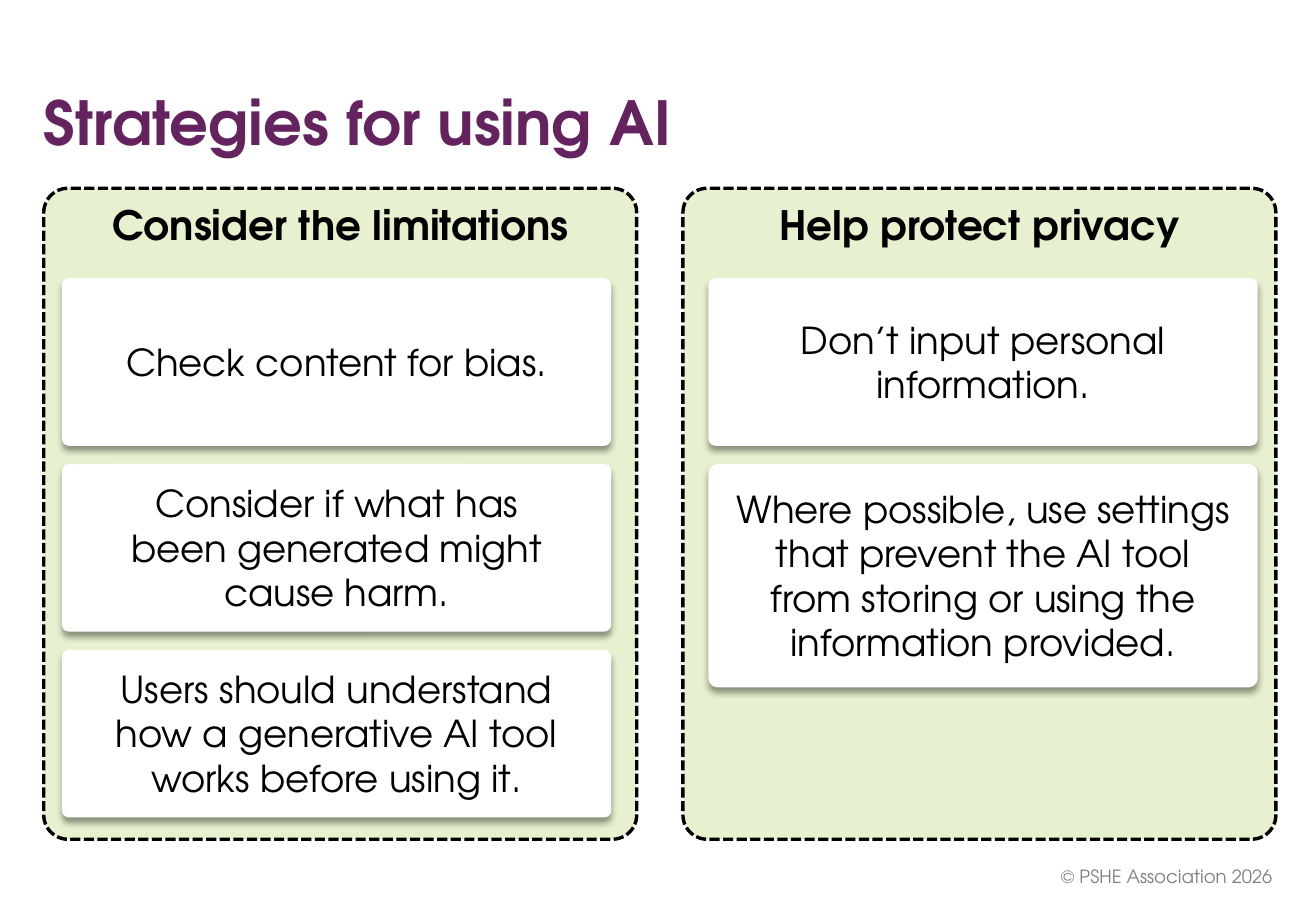
from lxml.etree import SubElement
from pptx import Presentation
from pptx.dml.color import RGBColor
from pptx.enum.dml import MSO_LINE
from pptx.enum.shapes import MSO_SHAPE
from pptx.enum.text import MSO_ANCHOR, PP_ALIGN
from pptx.oxml.ns import qn
from pptx.util import Inches, Pt

TITLE = "Strategies for using AI"
COPYRIGHT = "© PSHE Association 2026"
PANELS = [
    {
        "heading": "Consider the limitations",
        "left": 0.36,
        "card_left": 0.51,
        "cards": [
            ("Check content for bias.", 1.38, 0.16),
            ("Consider if what has been generated might cause harm.", 1.38, 0.39),
            ("Users should understand how a generative AI tool works before using it.", 1.38, 0.16),
        ],
    },
    {
        "heading": "Help protect privacy",
        "left": 5.62,
        "card_left": 5.83,
        "cards": [
            ("Don’t input personal information.", 1.38, 0.16),
            ("Where possible, use settings that prevent the AI tool from storing "
             "or using the information provided.", 1.84, 0.16),
        ],
    },
]

FONT = "TeX Gyre Adventor"
PURPLE = RGBColor(0x64, 0x23, 0x5E)
GREY = RGBColor(0x80, 0x80, 0x80)
GREEN = RGBColor(0xE7, 0xF1, 0xCF)
BLACK = RGBColor(0, 0, 0)
WHITE = RGBColor(0xFF, 0xFF, 0xFF)

PANEL_TOP, PANEL_WIDTH, PANEL_HEIGHT = 1.55, 4.88, 5.36
CARD_TOP, CARD_WIDTH, CARD_GAP = 2.29, 4.52, 0.15
CORNER = 0.041


def write(shape, text, size, color, align, anchor, bold=False, side=0.1, top=0.04):
    frame = shape.text_frame
    frame.word_wrap = True
    frame.vertical_anchor = anchor
    frame.margin_left = frame.margin_right = Inches(side)
    frame.margin_top, frame.margin_bottom = Inches(top), Inches(0.05)
    paragraph = frame.paragraphs[0]
    paragraph.alignment = align
    run = paragraph.add_run()
    run.text = text
    run.font.name = FONT
    run.font.size = Pt(size)
    run.font.bold = bold
    run.font.color.rgb = color
    return paragraph


def add_text(slide, box, *style):
    textbox = slide.shapes.add_textbox(*map(Inches, box))
    return write(textbox, *style, top=0.05)


def add_rounded(slide, box, fill):
    shape = slide.shapes.add_shape(MSO_SHAPE.ROUNDED_RECTANGLE, *map(Inches, box))
    shape.adjustments[0] = CORNER
    shape.fill.solid()
    shape.fill.fore_color.rgb = fill
    shape.line.fill.background()
    shape.shadow.inherit = False
    return shape


def add_panel(slide, left, heading):
    panel = add_rounded(slide, (left, PANEL_TOP, PANEL_WIDTH, PANEL_HEIGHT), GREEN)
    panel.line.color.rgb = BLACK
    panel.line.width = Pt(2)
    panel.line.dash_style = MSO_LINE.SQUARE_DOT
    panel.line._ln.find(qn("a:prstDash")).set("val", "sysDash")
    write(panel, heading, 24, BLACK, PP_ALIGN.CENTER, MSO_ANCHOR.TOP, True)


def add_card(slide, box, text, side):
    card = add_rounded(slide, box, WHITE)
    effects = card._element.spPr.find(qn("a:effectLst"))
    shadow = SubElement(effects, qn("a:outerShdw"), blurRad=str(Pt(4)),
                        dist=str(Pt(3)), dir="5400000", algn="t", rotWithShape="0")
    color = SubElement(shadow, qn("a:srgbClr"), val=str(BLACK))
    SubElement(color, qn("a:alpha"), val="40000")
    write(card, text, 22, BLACK, PP_ALIGN.CENTER, MSO_ANCHOR.MIDDLE, side=side)


def main():
    presentation = Presentation()
    presentation.slide_width, presentation.slide_height = Inches(10.83), Inches(7.5)
    slide = presentation.slides.add_slide(presentation.slide_layouts[6])
    title = add_text(slide, (0.26, 0.59, 8.48, 0.76), TITLE, 36, PURPLE,
                     PP_ALIGN.LEFT, MSO_ANCHOR.BOTTOM, True)
    title.line_spacing = Pt(43)
    add_text(slide, (8.13, 7.01, 2.44, 0.4), COPYRIGHT, 10.8, GREY,
             PP_ALIGN.RIGHT, MSO_ANCHOR.MIDDLE)
    for panel in PANELS:
        add_panel(slide, panel["left"], panel["heading"])
        top = CARD_TOP
        for text, height, side in panel["cards"]:
            add_card(slide, (panel["card_left"], top, CARD_WIDTH, height), text, side)
            top += height + CARD_GAP
    presentation.save("out.pptx")


if __name__ == "__main__":
    main()
